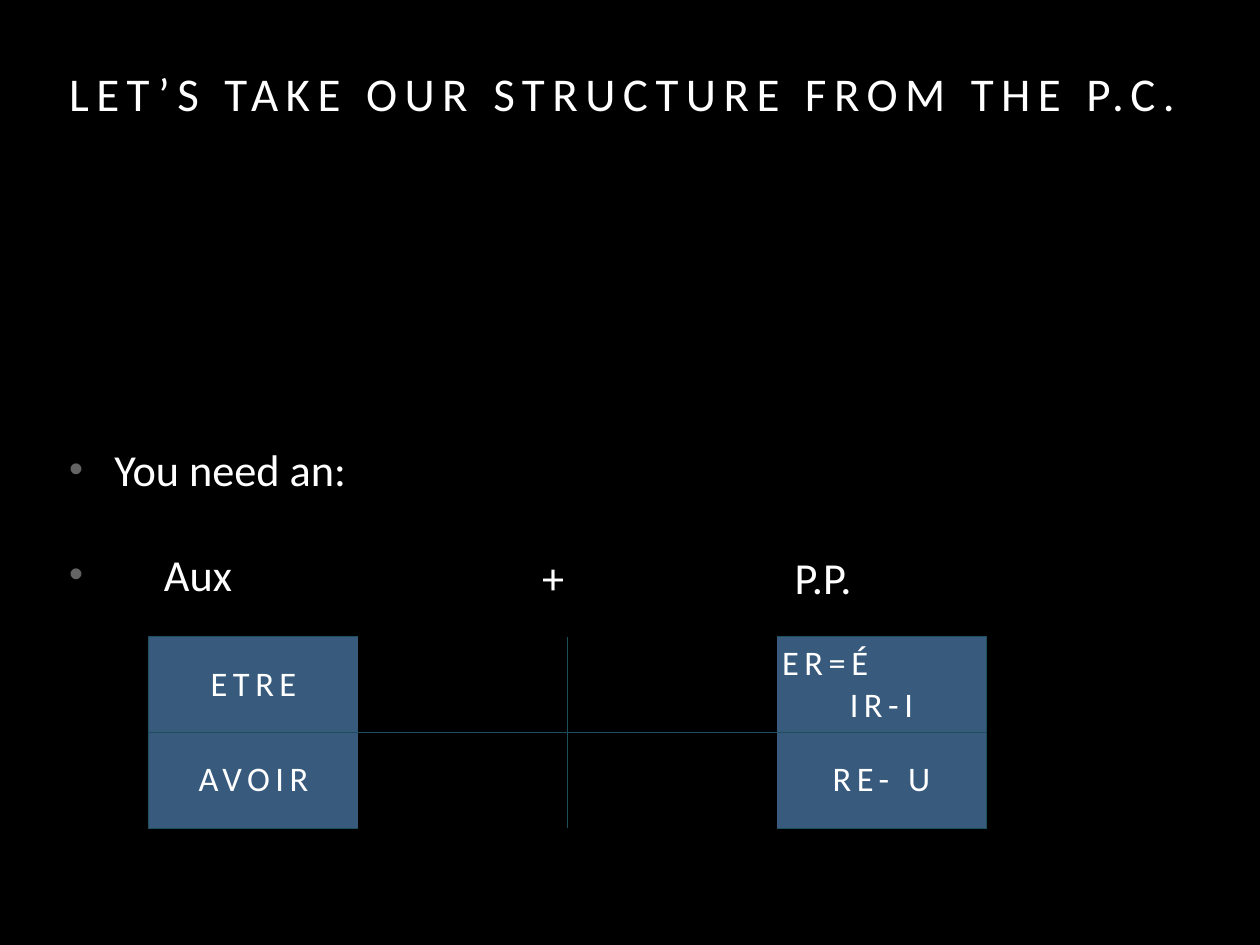
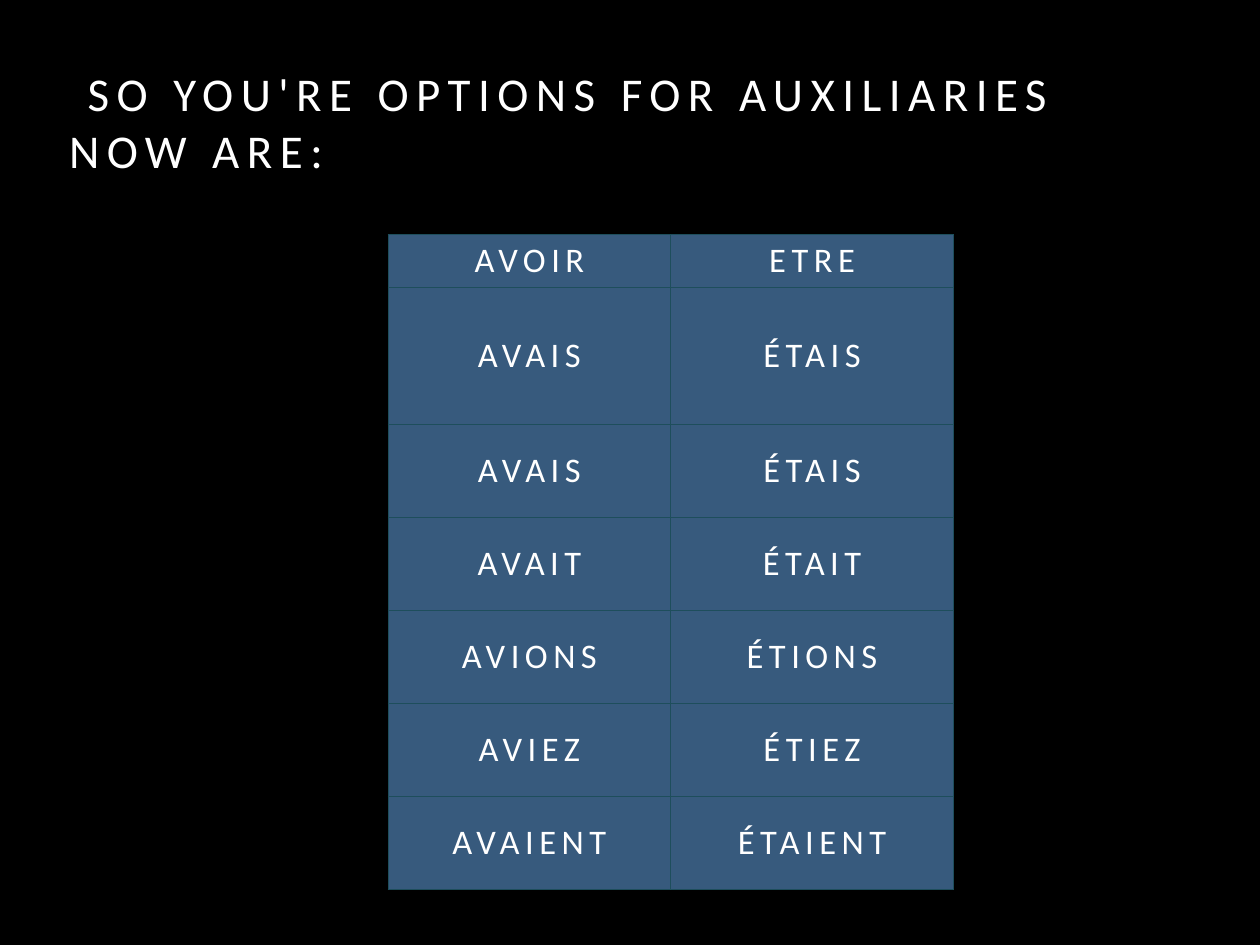
import pptx
import pptx.dml.color
import pptx.enum.text
import pptx.oxml.ns
import pptx.util
from lxml import etree

PX = 9144  # one px is a hundredth of an inch
FONT = "Calibri"
INSET = 6
COLORS = {
    "ground": "000000",
    "text": "FFFFFF",
    "bullet": "646464",
    "cell": "375A7D",
    "border": "1E4E5C",
}
LEFT = pptx.enum.text.PP_ALIGN.LEFT
CENTER = pptx.enum.text.PP_ALIGN.CENTER
TOP = pptx.enum.text.MSO_ANCHOR.TOP
MIDDLE = pptx.enum.text.MSO_ANCHOR.MIDDLE
TITLE_BOX = (72, 67, 1278, 156)
BODY_BOX = (72, 221, 1278, 735)


def px(length):
    return pptx.util.Emu(round(length * PX))


def rgb(name):
    return pptx.dml.color.RGBColor.from_string(COLORS[name])


def add_tag(parent, tag, **attributes):
    return etree.SubElement(parent, pptx.oxml.ns.qn(tag), attributes)


def place(shape, box):
    shape.left, shape.top, shape.width, shape.height = map(px, box)


def prepare_frame(frame, anchor):
    frame.word_wrap = True
    frame.auto_size = pptx.enum.text.MSO_AUTO_SIZE.NONE
    frame.vertical_anchor = anchor
    frame.margin_left = frame.margin_right = px(INSET)
    frame.margin_top = frame.margin_bottom = px(INSET)


def write_text(para, text, size=36, align=LEFT, tracking=0, before=0, margin=0, indent=0):
    """Fill one paragraph; tracking is in hundredths of a point."""
    para.alignment = align
    para.line_spacing = 1.0
    para.space_before = pptx.util.Pt(before)
    properties = para._p.get_or_add_pPr()
    properties.set("marL", str(px(margin)))
    properties.set("indent", str(px(indent)))
    span = para.add_run()
    span.text = text
    span.font.name = FONT
    span.font.size = pptx.util.Pt(size)
    span.font.bold = False
    span.font.color.rgb = rgb("text")
    span._r.get_or_add_rPr().set("spc", str(tracking))


def add_bullet(para):
    properties = para._p.get_or_add_pPr()
    color = add_tag(properties, "a:buClr")
    add_tag(color, "a:srgbClr", val=COLORS["bullet"])
    add_tag(properties, "a:buSzPct", val="90000")
    add_tag(properties, "a:buFont", typeface="Arial")
    add_tag(properties, "a:buChar", char="•")


def set_title(page, text, indent=0):
    title = page.shapes.title
    place(title, TITLE_BOX)
    prepare_frame(title.text_frame, TOP)
    write_text(title.text_frame.paragraphs[0], text, size=38.2, tracking=610, indent=indent)


def set_list(page, box, items):
    """Items are pairs of text and hanging indent."""
    body = page.placeholders[1]
    place(body, box)
    frame = body.text_frame
    prepare_frame(frame, MIDDLE)
    for number, (text, hang) in enumerate(items):
        para = frame.add_paragraph() if number else frame.paragraphs[0]
        write_text(para, text, before=42, margin=hang, indent=-hang)
        add_bullet(para)


def add_label(page, box, text):
    label = page.shapes.add_textbox(*map(px, box))
    prepare_frame(label.text_frame, MIDDLE)
    write_text(label.text_frame.paragraphs[0], text)


def set_borders(cell, edges):
    properties = cell._tc.get_or_add_tcPr()
    for position, edge in enumerate("LRTB"):
        line = add_tag(properties, "a:ln" + edge, w=str(pptx.util.Pt(1)))
        if edge in edges:
            fill = add_tag(line, "a:solidFill")
            add_tag(fill, "a:srgbClr", val=COLORS["border"])
        else:
            add_tag(line, "a:noFill")
        properties.insert(position, line)


def fill_cell(cell, lines, edges):
    """Lines are pairs of text and alignment; an empty cell takes the ground colour."""
    cell.fill.solid()
    cell.fill.fore_color.rgb = rgb("cell" if lines else "ground")
    cell.vertical_anchor = MIDDLE
    cell.margin_left = cell.margin_right = px(INSET)
    cell.margin_top = cell.margin_bottom = px(INSET)
    for number, (text, align) in enumerate(lines):
        frame = cell.text_frame
        para = frame.add_paragraph() if number else frame.paragraphs[0]
        write_text(para, text, size=28, align=align, tracking=450)
    set_borders(cell, edges)


def add_grid(page, box, heights, rows, edges_at):
    left, top, width, _ = box
    columns = len(rows[0])
    frame = page.shapes.add_table(len(rows), columns, px(left), px(top), px(width), px(sum(heights)))
    table = frame.table
    table.first_row = table.horz_banding = False
    for column in table.columns:
        column.width = px(width / columns)
    for row, height in enumerate(heights):
        table.rows[row].height = px(height)
        for column, content in enumerate(rows[row]):
            lines = [(content, CENTER)] if isinstance(content, str) else content
            fill_cell(table.cell(row, column), lines, edges_at(row, column))


def build_structure(deck):
    page = deck.slides.add_slide(deck.slide_layouts[1])
    set_title(page, "LET’S TAKE OUR STRUCTURE FROM THE P.C.")
    set_list(page, BODY_BOX, [("You need an:", 51), ("Aux", 107)])

    # Rest of the formula, on the line of the second bullet
    for left, text in ((606, "+"), (891, "P.P.")):
        add_label(page, (left, 615, 120, 72), text)

    # Auxiliaries and participle endings
    rows = [
        ["ETRE", [], [], [("ER=É", LEFT), ("IR-I", CENTER)]],
        ["AVOIR", [], [], "RE- U"],
    ]
    column_edges = ["LTB", "R", "L", "RTB"]

    def edges_at(row, column):
        return column_edges[column] + "BT"[row]

    add_grid(page, (168, 719, 945, 217), [108, 108], rows, edges_at)


def build_auxiliaries(deck):
    page = deck.slides.add_slide(deck.slide_layouts[5])
    set_title(page, "SO YOU'RE OPTIONS FOR AUXILIARIES NOW ARE:", indent=21)
    rows = [
        ["AVOIR", "ETRE"],
        ["AVAIS", "ÉTAIS"],
        ["AVAIS", "ÉTAIS"],
        ["AVAIT", "ÉTAIT"],
        ["AVIONS", "ÉTIONS"],
        ["AVIEZ", "ÉTIEZ"],
        ["AVAIENT", "ÉTAIENT"],
    ]
    heights = [55, 155] + [105] * 5
    add_grid(page, (438, 265, 638, 735), heights, rows, lambda row, column: "LRTB")


def main():
    deck = pptx.Presentation()
    deck.slide_width, deck.slide_height = px(1422), px(1067)
    ground = deck.slide_master.background.fill
    ground.solid()
    ground.fore_color.rgb = rgb("ground")
    build_structure(deck)
    build_auxiliaries(deck)
    deck.save("out.pptx")


if __name__ == "__main__":
    main()
